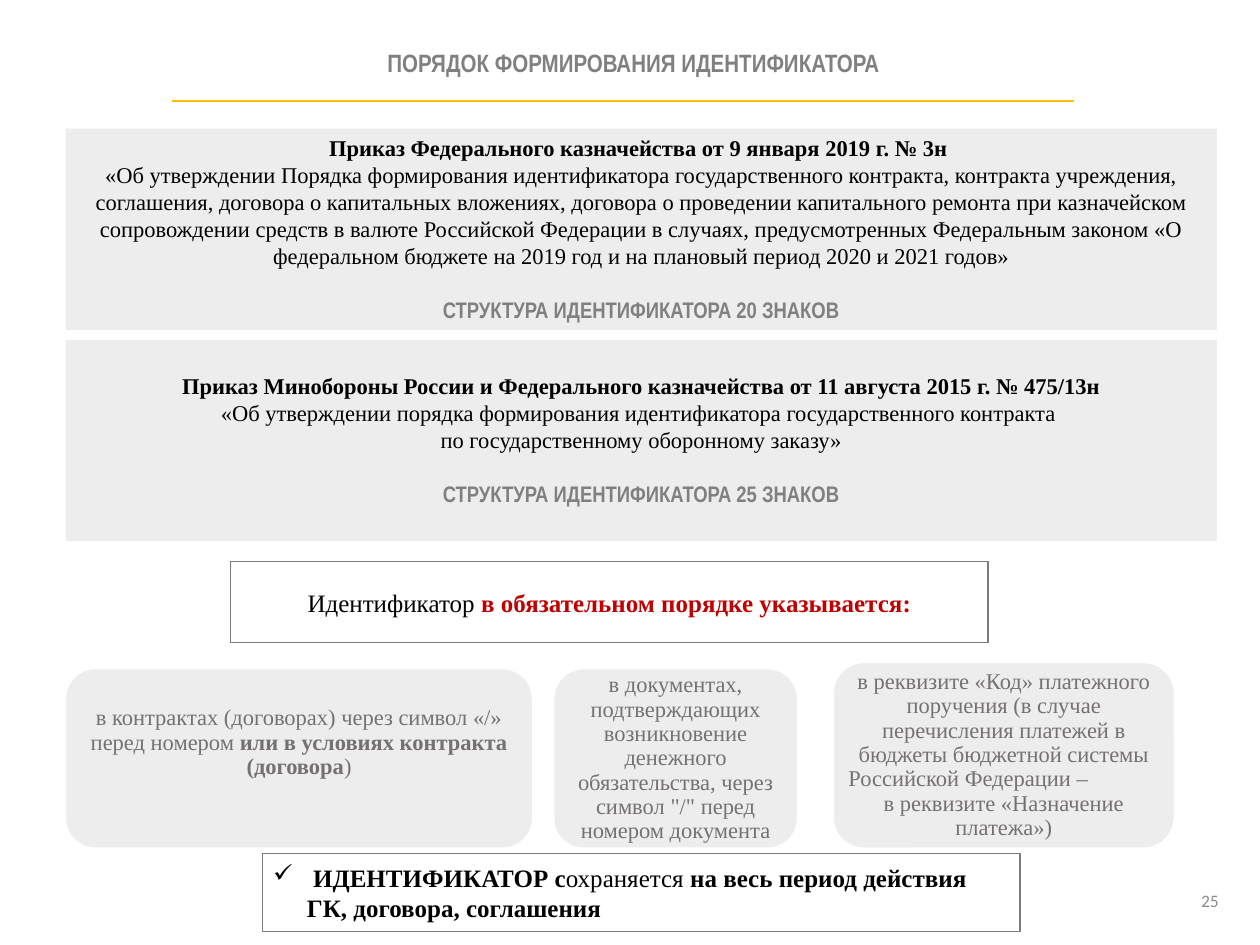
import pptx
import pptx.util
import pptx.dml.color
import pptx.oxml
import pptx.oxml.ns
import pptx.enum.shapes
import pptx.enum.text
import lxml.etree

Pt = pptx.util.Pt
RGBColor = pptx.dml.color.RGBColor
SHAPES = pptx.enum.shapes.MSO_SHAPE
ALIGN = pptx.enum.text.PP_ALIGN
ANCHOR = pptx.enum.text.MSO_ANCHOR
qn = pptx.oxml.ns.qn

BLACK = RGBColor(0x00, 0x00, 0x00)
WHITE = RGBColor(0xFF, 0xFF, 0xFF)
PANEL = RGBColor(0xED, 0xED, 0xED)
BORDER = RGBColor(0x7C, 0x7C, 0x7C)
HEADING = RGBColor(0x80, 0x80, 0x80)
CARD_TEXT = RGBColor(0x76, 0x71, 0x71)
RED = RGBColor(0xC0, 0x00, 0x00)
GOLD = RGBColor(0xFF, 0xC0, 0x00)
NUMBER = RGBColor(0x8C, 0x8C, 0x8C)

# A style is (font, size, colour, bold); a paragraph is a list of (text, style).
TITLE = ("Arial Narrow", 20, HEADING, True)
STRUCTURE = ("Arial Narrow", 18, HEADING, True)
BODY = ("Times New Roman", 18, BLACK, False)
BODY_BOLD = ("Times New Roman", 18, BLACK, True)
NOTE = ("Times New Roman", 20, BLACK, False)
NOTE_BOLD = ("Times New Roman", 20, BLACK, True)
NOTE_RED = ("Times New Roman", 20, RED, True)
CARD = ("Times New Roman", 18, CARD_TEXT, False)
CARD_BOLD = ("Times New Roman", 18, CARD_TEXT, True)
PAGE = ("Calibri", 14, NUMBER, False)

title = [[("ПОРЯДОК ФОРМИРОВАНИЯ ИДЕНТИФИКАТОРА", TITLE)]]
page_number = [[("25", PAGE)]]

# top inset, paragraphs
orders = [
    (4.5, [
        [("Приказ Федерального казначейства от 9 января 2019 г. № 3н ", BODY_BOLD)],
        [("«Об утверждении Порядка формирования идентификатора государственного контракта, "
          "контракта учреждения, соглашения, договора о капитальных вложениях, договора о "
          "проведении капитального ремонта при казначейском сопровождении средств в валюте "
          "Российской Федерации в случаях, предусмотренных Федеральным законом «О федеральном "
          "бюджете на 2019 год и на плановый период 2020 и 2021 годов»", BODY)],
        [("СТРУКТУРА ИДЕНТИФИКАТОРА 20 ЗНАКОВ", STRUCTURE)],
    ]),
    (26, [
        [("Приказ Минобороны России и Федерального казначейства от 11 августа "
          "2015 г. № 475/13н", BODY_BOLD)],
        [("«Об утверждении порядка формирования идентификатора государственного контракта ", BODY)],
        [("по государственному оборонному заказу»", BODY)],
        [("СТРУКТУРА ИДЕНТИФИКАТОРА 25 ЗНАКОВ", STRUCTURE)],
    ]),
]

requirement = [[("Идентификатор ", NOTE), ("в обязательном порядке указывается:", NOTE_RED)]]

# left, top, width, bottom inset, paragraphs
cards = [
    (52.5, 535, 373.5, 30, [
        [("в контрактах (договорах) через символ «/» перед номером ", CARD),
         ("или в условиях контракта (договора", CARD_BOLD), (")", CARD)]]),
    (443, 535, 195, 5, [
        [("в документах, подтверждающих возникновение денежного обязательства, "
          "через символ \"/\" перед номером документа", CARD)]]),
    (666.5, 530, 273, 5, [
        [("в реквизите «Код» платежного поручения (в случае перечисления платежей "
          "в бюджеты бюджетной системы", CARD)],
        [("Российской Федерации –", CARD)],
        [("в реквизите «Назначение платежа»)", CARD)]]),
]
CARDS_BOTTOM = 678.5

validity = [[(" ИДЕНТИФИКАТОР с", NOTE_BOLD), ("охраняется ", NOTE),
             ("на весь период действия ГК, договора, соглашения", NOTE_BOLD)]]


def write(shape, paragraphs, align=ALIGN.CENTER, anchor=ANCHOR.MIDDLE,
          insets=(8.5, 4.5, 8.5, 4.5), line_spacing=None):
    """Fill the shape with styled runs; insets are left, top, right, bottom."""
    frame = shape.text_frame
    frame.word_wrap = True
    frame.vertical_anchor = anchor
    (frame.margin_left, frame.margin_top,
     frame.margin_right, frame.margin_bottom) = map(Pt, insets)
    for i, runs in enumerate(paragraphs):
        paragraph = frame.paragraphs[0] if i == 0 else frame.add_paragraph()
        paragraph.alignment = align
        if line_spacing:
            paragraph.line_spacing = line_spacing
        for text, (font, size, colour, bold) in runs:
            run = paragraph.add_run()
            run.text = text
            run.font.name = font
            run.font.size = Pt(size)
            run.font.color.rgb = colour
            run.font.bold = bold
    return frame.paragraphs


def add_box(slide, kind, box, fill, line=None):
    shape = slide.shapes.add_shape(kind, *map(Pt, box))
    shape.shadow.inherit = False
    shape.fill.solid()
    shape.fill.fore_color.rgb = fill
    if line is None:
        shape.line.fill.background()
    else:
        shape.line.color.rgb = line
        shape.line.width = Pt(1)
    return shape


def add_check_bullet(paragraph, indent):
    properties = paragraph._p.get_or_add_pPr()
    properties.set("marL", str(Pt(indent)))
    properties.set("indent", str(-Pt(indent)))
    lxml.etree.SubElement(properties, qn("a:buChar")).set("char", "✓")


def main():
    deck = pptx.Presentation()
    deck.slide_width, deck.slide_height = Pt(1008), Pt(756)
    slide = deck.slides.add_slide(deck.slide_layouts[6])

    number_box = slide.shapes.add_textbox(Pt(940), Pt(700.5), Pt(43.5), Pt(40))
    write(number_box, page_number, ALIGN.RIGHT)

    rule = slide.shapes.add_connector(
        pptx.enum.shapes.MSO_CONNECTOR.STRAIGHT, Pt(138), Pt(81), Pt(859), Pt(81))
    rule.line.color.rgb = GOLD
    rule.line.width = Pt(2)
    lxml.etree.SubElement(rule._element.spPr, qn("a:effectLst"))

    title_box = slide.shapes.add_textbox(Pt(74), Pt(34), Pt(865.5), Pt(31.5))
    write(title_box, title)

    for i, (top_inset, paragraphs) in enumerate(orders):
        panel = add_box(slide, SHAPES.RECTANGLE, (52.5, 103 + i * 169, 921, 161), PANEL)
        lines = write(panel, paragraphs, anchor=ANCHOR.TOP, insets=(8.5, top_inset, 8.5, 4.5))
        lines[-1].space_before = Pt(21.5)

    requirement_box = add_box(slide, SHAPES.RECTANGLE, (184.5, 449.5, 606, 64.5), WHITE, BORDER)
    write(requirement_box, requirement)

    for left, top, width, bottom_inset, paragraphs in cards:
        card = add_box(slide, SHAPES.ROUNDED_RECTANGLE,
                       (left, top, width, CARDS_BOTTOM - top), PANEL, WHITE)
        lines = write(card, paragraphs, insets=(5, 5, 5, bottom_inset), line_spacing=0.9)
        if len(lines) == 3:
            lines[1].alignment = ALIGN.LEFT

    validity_box = add_box(slide, SHAPES.RECTANGLE, (210, 682.5, 606, 63), WHITE, BORDER)
    add_check_bullet(write(validity_box, validity, ALIGN.LEFT)[0], 27)

    deck.save("out.pptx")


if __name__ == "__main__":
    main()
